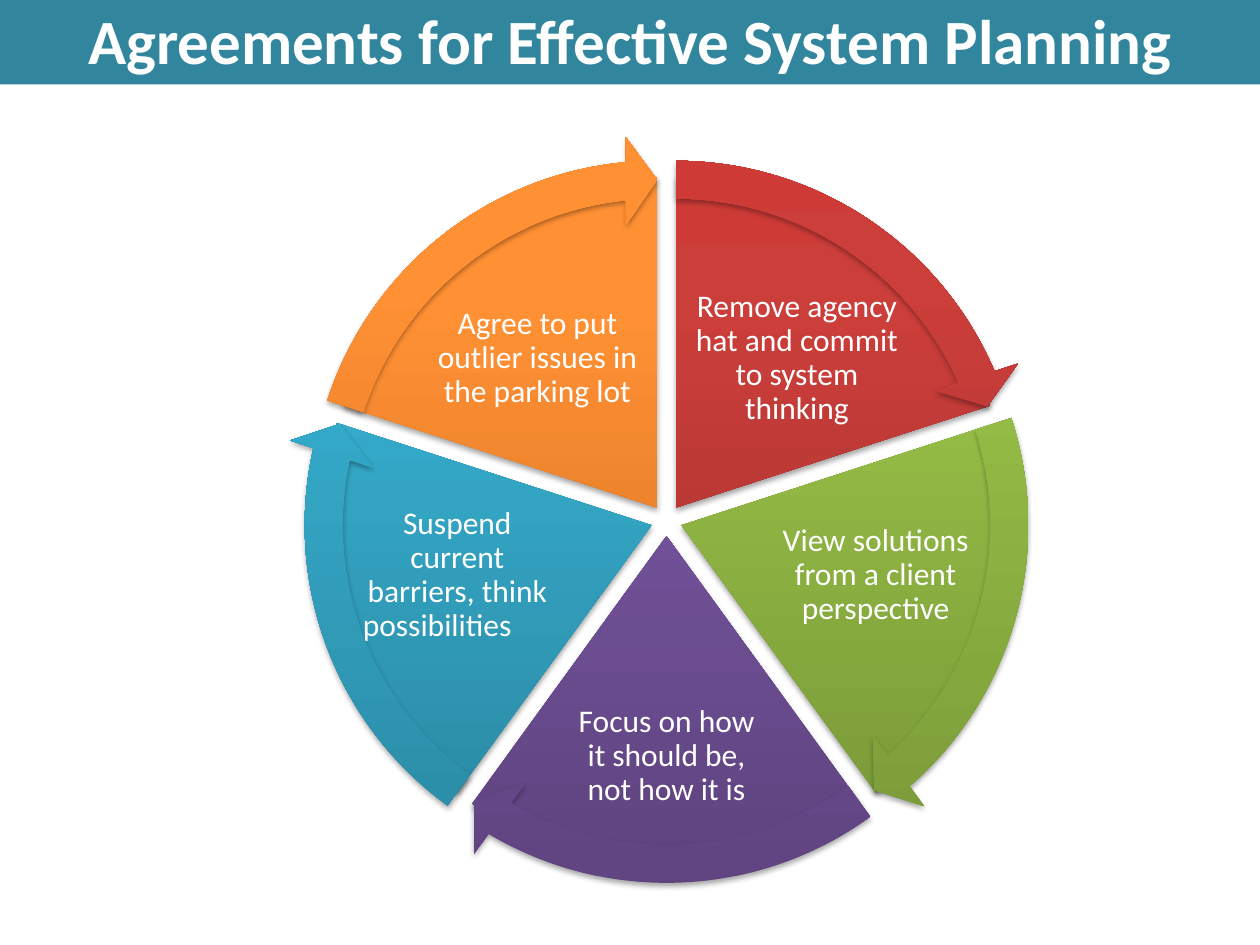
import math
from dataclasses import dataclass

import pptx
import pptx.dml.color
import pptx.enum.shapes
import pptx.enum.text
import pptx.oxml
import pptx.oxml.ns
import pptx.util
from pptx.util import Inches

Kind = pptx.enum.shapes.MSO_SHAPE
Box = tuple[float, float, float, float]

HEX = {"white": "FFFFFF", "teal": "31859C", "black": "000000"}
FONT = "Calibri"

# Wheel geometry in inches; turns in the shapes' own units (216 = full circle)
HUB = (5.29, 4.13)
GAP = 0.125
PIE = 5.25
RING = 5.9
FULL = 216
STEP = FULL / 5
TOP = 162


@dataclass
class Wedge:
    text: str
    box: Box
    stops: tuple[str, str, str]  # bottom, near top, top


WEDGES = [
    Wedge("Remove agency hat and commit to system thinking",
          (5.48, 2.28, 1.69, 1.12), ("9C2F2D", "CB3E3A", "CE3B37")),
    Wedge("View solutions from a client perspective",
          (6.17, 3.94, 1.56, 1.25), ("779737", "9BC348", "9DC746")),
    Wedge("Focus on how it should be, not how it is",
          (4.54, 5.31, 1.5, 1.38), ("5F4480", "7B58A6", "7C57A8")),
    Wedge("Suspend current barriers, think possibilities\t",
          (2.85, 3.94, 1.56, 1.25), ("2A88A2", "37B1D2", "34B4D6")),
    Wedge("Agree to put outlier issues in the parking lot",
          (3.42, 2.28, 1.69, 1.12), ("CC6E20", "FF9034", "FF9136")),
]


def write(shape, text: str, *, size: float, bold: bool = False,
          inset: float | None = None, lead: float | None = None) -> None:
    """Put centred white text in a shape."""
    frame = shape.text_frame
    frame.word_wrap = True
    frame.vertical_anchor = pptx.enum.text.MSO_ANCHOR.MIDDLE
    if inset is not None:
        frame.margin_left = frame.margin_right = Inches(inset)
        frame.margin_top = frame.margin_bottom = Inches(inset)
    para = frame.paragraphs[0]
    para.alignment = pptx.enum.text.PP_ALIGN.CENTER
    if lead is not None:
        para.line_spacing = lead
    run = para.add_run()
    run.text = text
    run.font.name = FONT
    run.font.size = pptx.util.Pt(size)
    run.font.bold = bold
    run.font.color.rgb = pptx.dml.color.RGBColor.from_string(HEX["white"])


def paint(shape, stops: tuple[str, str, str]) -> None:
    """Give a shape an upward gradient, no line and a soft shadow."""
    shape.line.fill.background()
    props = shape._element.spPr
    space = pptx.oxml.ns.nsdecls("a")
    marks = "".join(
        f'<a:gs pos="{pos}"><a:srgbClr val="{tone}"/></a:gs>'
        for pos, tone in zip((0, 80000, 100000), stops))
    grad = pptx.oxml.parse_xml(
        f'<a:gradFill {space} rotWithShape="1"><a:gsLst>{marks}</a:gsLst>'
        '<a:lin ang="16200000" scaled="0"/></a:gradFill>')
    props.find(pptx.oxml.ns.qn("a:ln")).addprevious(grad)
    props.append(pptx.oxml.parse_xml(
        f'<a:effectLst {space}><a:outerShdw blurRad="40000" dist="23000" '
        f'dir="5400000" rotWithShape="0"><a:srgbClr val="{HEX["black"]}">'
        '<a:alpha val="35000"/></a:srgbClr></a:outerShdw></a:effectLst>'))


def disc(slide, kind: Kind, order: int, size: float,
         turns: tuple[float, ...]) -> None:
    """Draw one round part, pushed out from the hub along its mid angle."""
    mid = math.radians(72 * order - 54)
    left = HUB[0] + GAP * math.cos(mid) - size / 2
    top = HUB[1] + GAP * math.sin(mid) - size / 2
    shape = slide.shapes.add_shape(
        kind, Inches(left), Inches(top), Inches(size), Inches(size))
    for spot, turn in enumerate(turns):
        shape.adjustments[spot] = turn
    paint(shape, WEDGES[order].stops)


def main() -> None:
    deck = pptx.Presentation()
    deck.slide_width, deck.slide_height = Inches(10), Inches(7.5)
    slide = deck.slides.add_slide(deck.slide_layouts[6])
    starts = [(TOP + STEP * order) % FULL for order in range(len(WEDGES))]

    # Wedges with their labels
    for order, (wedge, start) in enumerate(zip(WEDGES, starts)):
        disc(slide, Kind.PIE, order, PIE, (start, (start + STEP) % FULL))
        label = slide.shapes.add_textbox(*map(Inches, wedge.box))
        write(label, wedge.text, size=18, inset=0.03, lead=0.9)

    # Arrows round the rim
    for order, start in enumerate(starts):
        tip = (start + STEP - 3.28) % FULL
        disc(slide, Kind.CIRCULAR_ARROW, order, RING,
             (0.051, 3.28, tip, start, 0.059))

    # Title band
    band = slide.shapes.add_shape(
        Kind.RECTANGLE, Inches(0), Inches(-0.04), Inches(10), Inches(0.71))
    band.shadow.inherit = False
    band.fill.solid()
    band.fill.fore_color.rgb = pptx.dml.color.RGBColor.from_string(HEX["teal"])
    band.line.fill.background()
    write(band, "Agreements for Effective System Planning", size=36, bold=True)

    deck.save("out.pptx")


if __name__ == "__main__":
    main()
